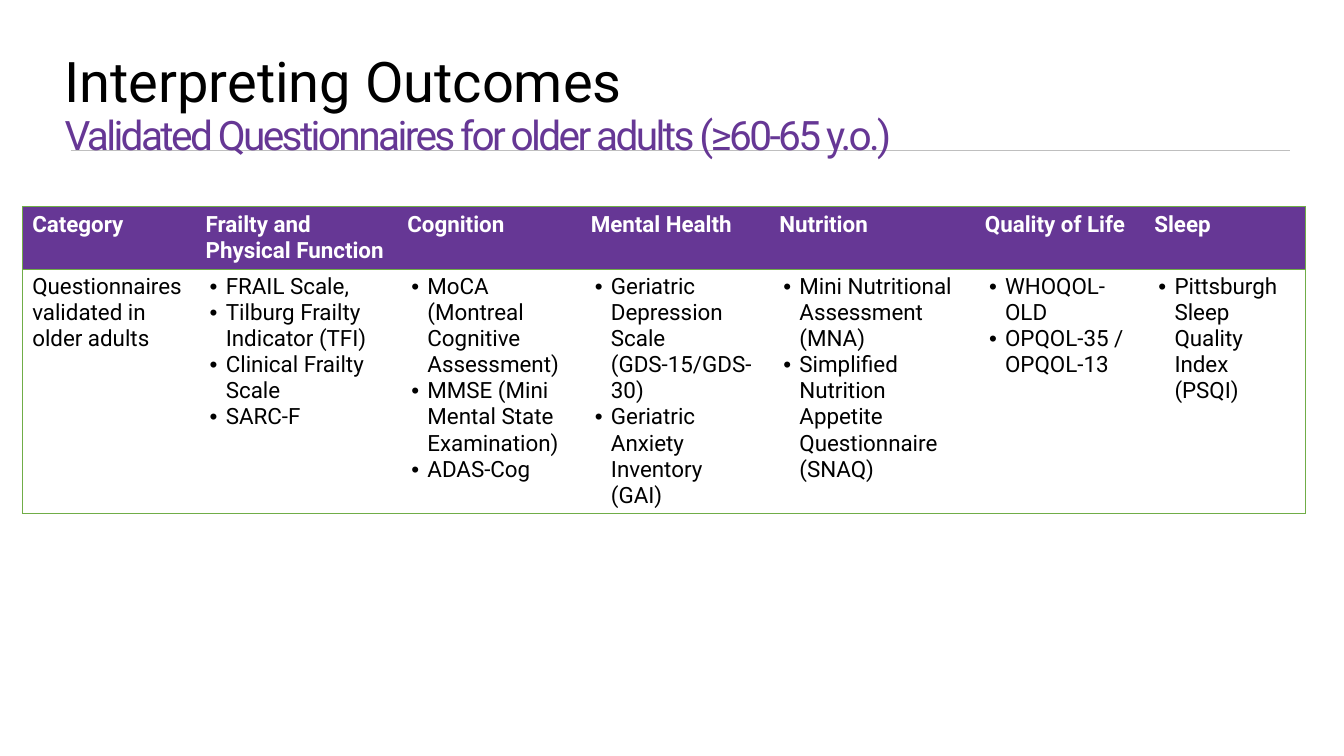
import lxml.etree
import pptx
import pptx.dml.color
import pptx.enum.shapes
import pptx.enum.text
import pptx.oxml.ns
import pptx.util
from dataclasses import dataclass

PX = 9144  # EMU per px, 100 px to the inch


@dataclass(frozen=True)
class Theme:
    font: str = "Roboto"
    black: str = "000000"
    white: str = "FFFFFF"
    purple: str = "663795"
    green: str = "70AD47"
    grey: str = "BFBFBF"
    title_size: int = 40
    subtitle_size: int = 29
    table_size: int = 16
    hairline: float = 0.5


THEME = Theme()

COLUMN_WIDTHS = [172, 200, 182, 187, 204, 168, 160]
ROW_HEIGHTS = [62, 218]
LABEL = "Questionnaires validated in older adults"
QUESTIONNAIRES = {
    "Frailty and Physical Function": [
        "FRAIL Scale,", "Tilburg Frailty Indicator (TFI)",
        "Clinical Frailty Scale", "SARC-F"],
    "Cognition": [
        "MoCA (Montreal Cognitive Assessment)",
        "MMSE (Mini Mental State Examination)", "ADAS-Cog"],
    "Mental Health": [
        "Geriatric Depression Scale (GDS-15/GDS-30)",
        "Geriatric Anxiety Inventory (GAI)"],
    "Nutrition": [
        "Mini Nutritional Assessment (MNA)",
        "Simplified Nutrition Appetite Questionnaire (SNAQ)"],
    "Quality of Life": ["WHOQOL-OLD", "OPQOL-35 / OPQOL-13"],
    "Sleep": ["Pittsburgh Sleep Quality Index (PSQI)"],
}


def px(length):
    return pptx.util.Emu(length * PX)


def rgb(colour):
    return pptx.dml.color.RGBColor.from_string(colour)


def add_child(parent, tag, **attributes):
    return lxml.etree.SubElement(parent, pptx.oxml.ns.qn(tag), attributes)


def style_font(font, size, colour, bold=False):
    font.name = THEME.font
    font.size = pptx.util.Pt(size)
    font.bold = bold
    font.color.rgb = rgb(colour)


def add_rule(slide, left, top, right):
    rule = slide.shapes.add_connector(
        pptx.enum.shapes.MSO_CONNECTOR.STRAIGHT,
        px(left), px(top), px(right), px(top))
    rule.line.color.rgb = rgb(THEME.grey)
    rule.line.width = pptx.util.Pt(THEME.hairline)
    add_child(rule._element.spPr, "a:effectLst")
    slide.shapes._spTree.insert(2, rule._element)  # behind the title


def fill_title(title, heading, subtitle):
    title.left, title.top, title.width, title.height = map(px, (54, 49, 1150, 145))
    frame = title.text_frame
    frame.word_wrap = True
    frame.auto_size = pptx.enum.text.MSO_AUTO_SIZE.NONE
    frame.vertical_anchor = pptx.enum.text.MSO_ANCHOR.TOP
    paragraph = frame.paragraphs[0]
    paragraph.alignment = pptx.enum.text.PP_ALIGN.LEFT
    paragraph.line_spacing = 0.9

    heading_run = paragraph.add_run()
    heading_run.text = heading
    style_font(heading_run.font, THEME.title_size, THEME.black)
    paragraph.add_line_break()
    subtitle_run = paragraph.add_run()
    subtitle_run.text = subtitle
    style_font(subtitle_run.font, THEME.subtitle_size, THEME.purple)
    subtitle_run._r.get_or_add_rPr().set("spc", "-190")


def set_borders(cell, green_sides):
    properties = cell._tc.get_or_add_tcPr()
    for side in "LRTB":
        border = add_child(properties, f"a:ln{side}",
                           w=str(pptx.util.Pt(THEME.hairline)))
        if side in green_sides:
            fill = add_child(border, "a:solidFill")
            add_child(fill, "a:srgbClr", val=THEME.green)
        else:
            add_child(border, "a:noFill")


def add_bullet(paragraph):
    properties = paragraph._p.get_or_add_pPr()
    properties.set("marL", str(px(20)))
    properties.set("indent", str(px(-16)))
    add_child(properties, "a:buFont", typeface="Arial")
    add_child(properties, "a:buChar", char="•")


def fill_cell(cell, lines, colour, bold=False, bulleted=False):
    cell.text = "\n".join(lines)
    for paragraph in cell.text_frame.paragraphs:
        if bulleted:
            add_bullet(paragraph)
        style_font(paragraph.font, THEME.table_size, colour, bold)


def add_questionnaire_table(slide):
    table = slide.shapes.add_table(
        len(ROW_HEIGHTS), len(COLUMN_WIDTHS), px(22), px(205),
        px(sum(COLUMN_WIDTHS)), px(sum(ROW_HEIGHTS))).table
    table.first_row = table.horz_banding = False
    for column, width in zip(table.columns, COLUMN_WIDTHS):
        column.width = px(width)
    for row, height in zip(table.rows, ROW_HEIGHTS):
        row.height = px(height)

    categories = [("Category", [LABEL]), *QUESTIONNAIRES.items()]
    for index, (category, names) in enumerate(categories):
        header, body = table.cell(0, index), table.cell(1, index)
        outer = {0: "L", len(categories) - 1: "R"}.get(index, "")
        set_borders(header, outer + "T")
        set_borders(body, outer + "TB")
        header.fill.solid()
        header.fill.fore_color.rgb = rgb(THEME.purple)
        body.fill.background()
        fill_cell(header, [category], THEME.white, bold=True)
        fill_cell(body, names, THEME.black, bulleted=index > 0)


def main():
    presentation = pptx.Presentation()
    presentation.slide_width, presentation.slide_height = px(1333), px(750)
    slide = presentation.slides.add_slide(presentation.slide_layouts[5])

    # Heading with its rule
    add_rule(slide, 70, 149, 1279)
    fill_title(slide.shapes.title, "Interpreting Outcomes",
               "Validated Questionnaires for older adults (≥60-65 y.o.)")

    # Questionnaires by category
    add_questionnaire_table(slide)
    presentation.save("out.pptx")


if __name__ == "__main__":
    main()
